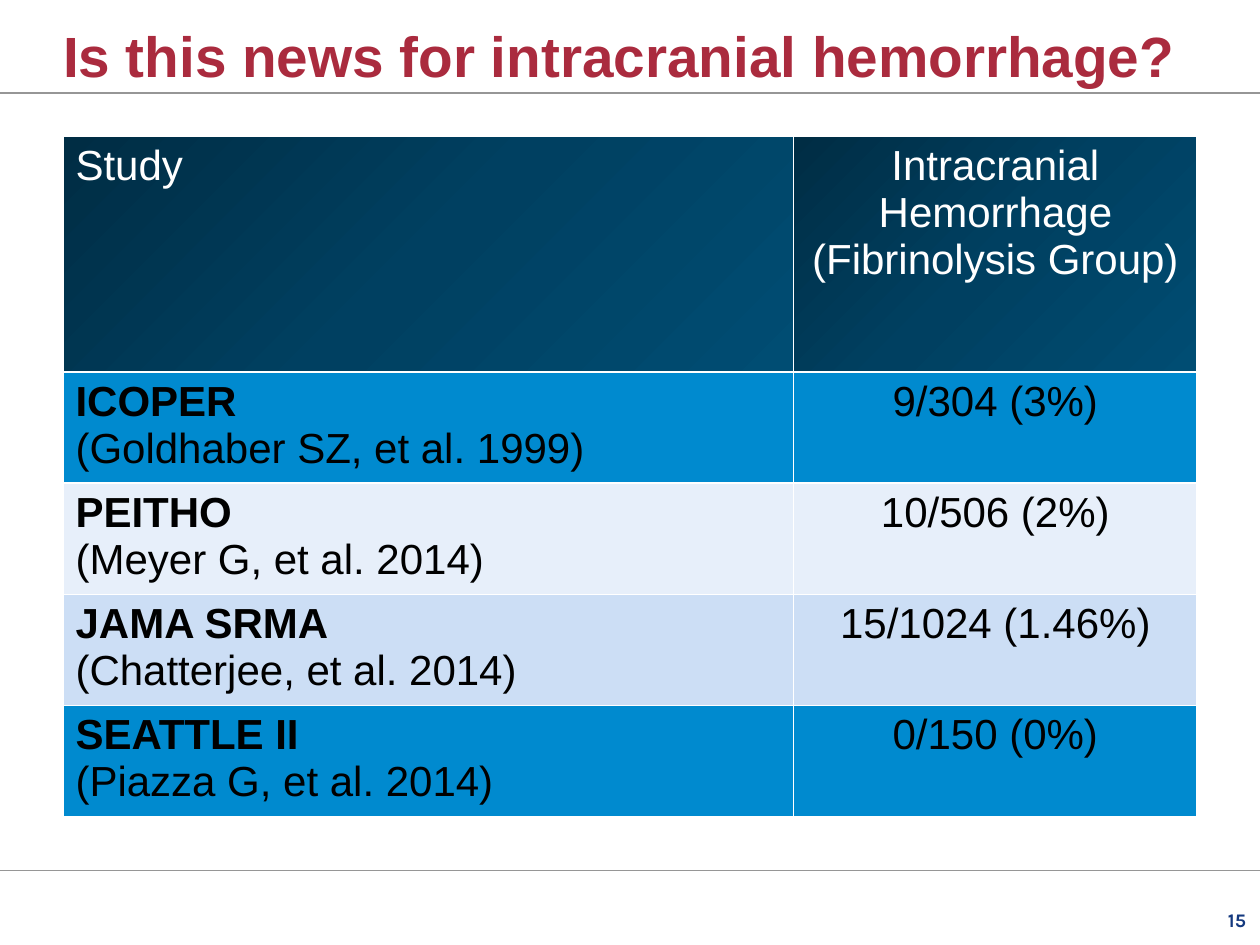
from lxml import etree
from pptx import Presentation
from pptx.dml.color import RGBColor
from pptx.enum.shapes import MSO_CONNECTOR
from pptx.enum.text import MSO_ANCHOR, MSO_AUTO_SIZE, PP_ALIGN
from pptx.oxml import parse_xml
from pptx.oxml.ns import nsdecls, qn
from pptx.util import Cm, Pt

LEFT, CENTER, RIGHT = PP_ALIGN.LEFT, PP_ALIGN.CENTER, PP_ALIGN.RIGHT
BOTTOM = MSO_ANCHOR.BOTTOM
NO_AUTOFIT = MSO_AUTO_SIZE.NONE
STRAIGHT = MSO_CONNECTOR.STRAIGHT

SLIDE_W, SLIDE_H = 25.4, 19.05
COLORS = {
    "title": "AA2B3E", "rule": "969696", "number": "14397F",
    "white": "FFFFFF", "black": "000000",
    "blue": "008ACF", "pale": "E7EFFA", "light": "CCDEF5",
}
HEADER_STOPS = [(0, "002D44"), (50, "004061"), (100, "004D73")]
HEADERS = ["Study", "Intracranial Hemorrhage (Fibrinolysis Group)"]
STUDIES = [
    ("ICOPER", "(Goldhaber SZ, et al. 1999)", "9/304 (3%)", "blue"),
    ("PEITHO", "(Meyer G, et al. 2014)", "10/506 (2%)", "pale"),
    ("JAMA SRMA", "(Chatterjee, et al. 2014)", "15/1024 (1.46%)", "light"),
    ("SEATTLE II", "(Piazza G, et al. 2014)", "0/150 (0%)", "blue"),
]
COLUMN_WIDTHS = [14.73, 8.13]
HEADER_HEIGHT, STUDY_HEIGHT = 4.75, 2.24


def rgb(name):
    return RGBColor.from_string(COLORS[name])


def write(paragraph, text, size=24, color="black", bold=False, font="Arial", align=LEFT):
    paragraph.alignment = align
    run = paragraph.add_run()
    run.text = text
    run.font.name = font
    run.font.size = Pt(size)
    run.font.bold = bold
    run.font.color.rgb = rgb(color)


def clear_margins(frame):
    frame.margin_left = frame.margin_top = frame.margin_right = frame.margin_bottom = 0
    frame.vertical_anchor = BOTTOM
    frame.auto_size = NO_AUTOFIT


def add_title(slide, left, top, width, height):
    title = slide.shapes.title
    title.left, title.top, title.width, title.height = map(Cm, (left, top, width, height))
    clear_margins(title.text_frame)
    write(title.text_frame.paragraphs[0], "Is this news for intracranial hemorrhage?",
          size=32.4, color="title", bold=True)


def add_rule(slide, y):
    rule = slide.shapes.add_connector(STRAIGHT, 0, Cm(y), Cm(SLIDE_W), Cm(y))
    rule.line.color.rgb = rgb("rule")
    rule.line.width = Pt(1)
    etree.SubElement(rule._element.spPr, qn("a:effectLst"))


def add_slide_number(slide, left, top, width, height):
    number = slide.shapes.add_textbox(*map(Cm, (left, top, width, height))).text_frame
    number.word_wrap = True
    clear_margins(number)
    write(number.paragraphs[0], "15", size=11, color="number", bold=True,
          font="Karla", align=RIGHT)


def fill_header(cell):
    """Give the cell the dark diagonal gradient."""
    stops = "".join(f'<a:gs pos="{pos * 1000}"><a:srgbClr val="{color}"/></a:gs>'
                    for pos, color in HEADER_STOPS)
    cell._tc.get_or_add_tcPr().append(parse_xml(
        f'<a:gradFill {nsdecls("a")} rotWithShape="1"><a:gsLst>{stops}</a:gsLst>'
        '<a:lin ang="2700000" scaled="0"/></a:gradFill>'))


def fill_solid(cell, color):
    cell.fill.solid()
    cell.fill.fore_color.rgb = rgb(color)


def add_borders(cell):
    """Put white lines on all four sides, ahead of the fill."""
    properties = cell._tc.get_or_add_tcPr()
    for index, side in enumerate(("lnL", "lnR", "lnT", "lnB")):
        properties.insert(index, parse_xml(
            f'<a:{side} {nsdecls("a")} w="12700"><a:solidFill>'
            f'<a:srgbClr val="{COLORS["white"]}"/></a:solidFill></a:{side}>'))


def add_study_table(slide, left, top):
    heights = [HEADER_HEIGHT] + [STUDY_HEIGHT] * len(STUDIES)
    table = slide.shapes.add_table(
        len(heights), len(COLUMN_WIDTHS), Cm(left), Cm(top),
        Cm(sum(COLUMN_WIDTHS)), Cm(sum(heights))).table
    for column, width in zip(table.columns, COLUMN_WIDTHS):
        column.width = Cm(width)
    for row, height in zip(table.rows, heights):
        row.height = Cm(height)

    for cell, heading, align in zip(table.rows[0].cells, HEADERS, (LEFT, CENTER)):
        write(cell.text_frame.paragraphs[0], heading, color="white", align=align)
        fill_header(cell)
    for row, (study, citation, rate, color) in enumerate(STUDIES, start=1):
        study_cell, rate_cell = table.rows[row].cells
        write(study_cell.text_frame.paragraphs[0], study, bold=True)
        write(study_cell.text_frame.add_paragraph(), citation)
        write(rate_cell.text_frame.paragraphs[0], rate, align=CENTER)
        fill_solid(study_cell, color)
        fill_solid(rate_cell, color)
    for cell in table.iter_cells():
        add_borders(cell)


def main():
    deck = Presentation()
    deck.slide_width, deck.slide_height = Cm(SLIDE_W), Cm(SLIDE_H)
    slide = deck.slides.add_slide(deck.slide_layouts[5])
    add_slide_number(slide, left=24.1, top=18.31, width=1.02, height=0.46)
    for y in (17.55, 1.88):
        add_rule(slide, y)
    add_title(slide, left=1.27, top=0.25, width=23.67, height=1.55)
    add_study_table(slide, left=1.27, top=2.75)
    deck.save("out.pptx")


if __name__ == "__main__":
    main()
